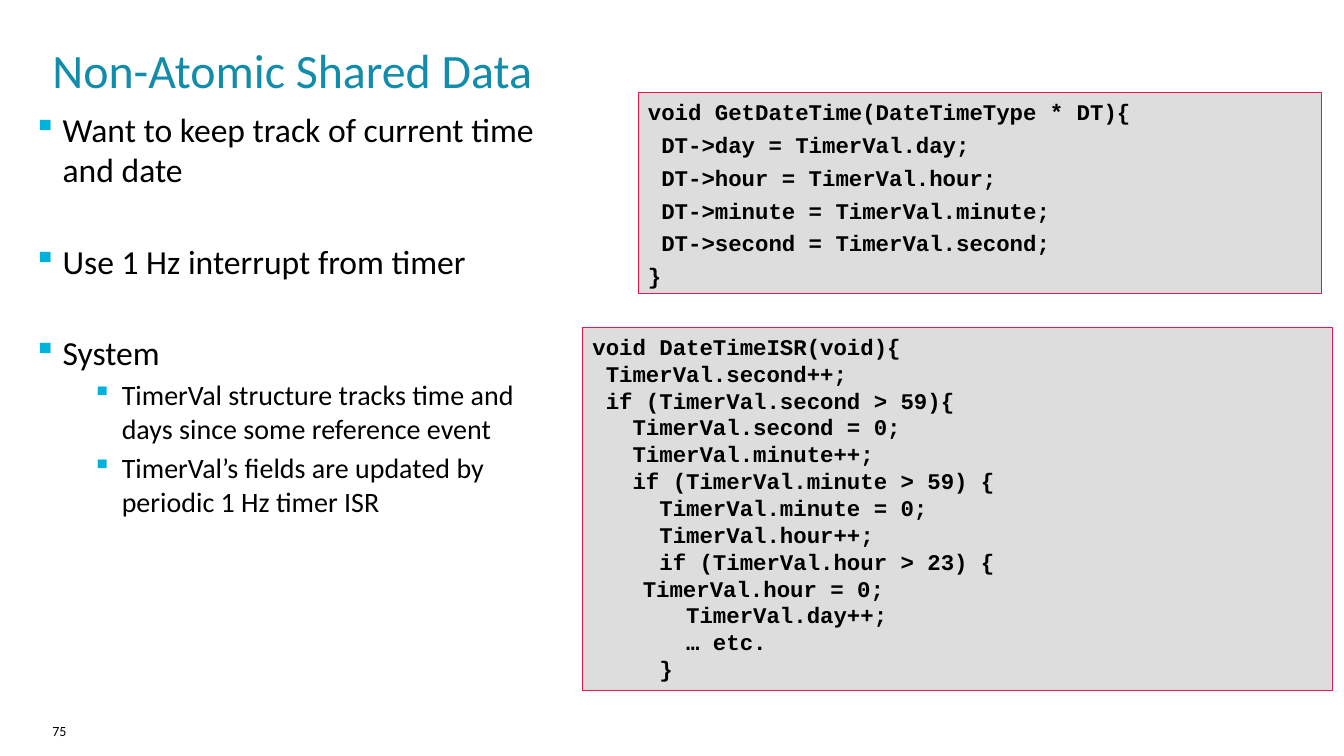
from dataclasses import dataclass

from lxml import etree
from pptx import Presentation, util as u
from pptx.dml.color import RGBColor
from pptx.enum import shapes, text
from pptx.oxml.ns import qn

BLACK, TEAL, CYAN, GREY, PINK = "000000", "128CAB", "00B1DB", "DDDDDD", "ED174F"
HANGING = 0.74


@dataclass
class Box:
    left: float
    top: float
    width: float
    height: float

    def lengths(self) -> tuple:
        return tuple(u.Cm(n) for n in (self.left, self.top, self.width, self.height))


@dataclass
class Bullet:
    wording: str
    size: float = 24
    margin: float = HANGING
    before: float = 4


@dataclass
class CodePanel:
    box: Box
    code: str
    before: float = 0


def color(value: str) -> RGBColor:
    return RGBColor.from_string(value)


def prepare(frame, inset: tuple = (0, 0, 0, 0), anchor=text.MSO_ANCHOR.TOP) -> None:
    frame.word_wrap = True
    frame.auto_size = text.MSO_AUTO_SIZE.NONE
    frame.vertical_anchor = anchor
    (frame.margin_left, frame.margin_top,
     frame.margin_right, frame.margin_bottom) = (u.Cm(n) for n in inset)


def write(frame, wording: str, *, first: bool = True, size: float = 24,
          font: str = "Calibri", fill: str = BLACK, bold: bool = False,
          before: float = 0):
    paragraph = frame.paragraphs[0] if first else frame.add_paragraph()
    paragraph.alignment = text.PP_ALIGN.LEFT
    paragraph.space_before = u.Pt(0 if first else before)
    run = paragraph.add_run()
    run.text = wording
    run.font.size, run.font.name, run.font.bold = u.Pt(size), font, bold
    run.font.color.rgb = color(fill)
    return paragraph


def add_bullet(paragraph, margin: float) -> None:
    properties = paragraph._p.get_or_add_pPr()
    properties.set("marL", str(u.Cm(margin)))
    properties.set("indent", str(-u.Cm(HANGING)))
    tint = etree.SubElement(properties, qn("a:buClr"))
    etree.SubElement(tint, qn("a:srgbClr"), val=CYAN)
    etree.SubElement(properties, qn("a:buSzPct"), val="95000")
    etree.SubElement(properties, qn("a:buChar"), char="▪")


def add_code(slide, panel: CodePanel) -> None:
    shape = slide.shapes.add_shape(shapes.MSO_SHAPE.RECTANGLE, *panel.box.lengths())
    shape.shadow.inherit = False
    shape.fill.solid()
    shape.fill.fore_color.rgb = color(GREY)
    shape.line.color.rgb = color(PINK)
    shape.line.width = u.Pt(0.75)
    prepare(shape.text_frame, (0.25, 0.13, 0.25, 0.13))
    for index, line in enumerate(panel.code.split("\n")):
        write(shape.text_frame, line, first=index == 0, size=16,
              font="Courier New", bold=True, before=panel.before)


BULLETS = [
    Bullet("Want to keep track of current time and date"),
    Bullet("Use 1 Hz interrupt from timer", before=36.5),
    Bullet("System", before=36.5),
    Bullet("TimerVal structure tracks time and days since some reference event",
           size=20, margin=2.23),
    Bullet("TimerVal’s fields are updated by periodic 1 Hz timer ISR",
           size=20, margin=2.23),
]

PANELS = [
    CodePanel(Box(16.08, 2.34, 17.22, 5.05), """void GetDateTime(DateTimeType * DT){
 DT->day = TimerVal.day;
 DT->hour = TimerVal.hour;
 DT->minute = TimerVal.minute;
 DT->second = TimerVal.second;
}""", before=4.3),
    CodePanel(Box(14.68, 8.26, 18.9, 9.14), """void DateTimeISR(void){
 TimerVal.second++;
 if (TimerVal.second > 59){
   TimerVal.second = 0;
   TimerVal.minute++;
   if (TimerVal.minute > 59) {
     TimerVal.minute = 0;
     TimerVal.hour++;
     if (TimerVal.hour > 23) {
\tTimerVal.hour = 0;
       TimerVal.day++;
       … etc.
     }"""),
]


def main() -> None:
    presentation = Presentation()
    presentation.slide_width, presentation.slide_height = u.Cm(33.87), u.Cm(19.05)
    slide = presentation.slides.add_slide(presentation.slide_layouts[5])

    # Title
    title = slide.shapes.title
    title.left, title.top, title.width, title.height = Box(
        1.32, 0.94, 30.99, 1.6).lengths()
    prepare(title.text_frame, anchor=text.MSO_ANCHOR.MIDDLE)
    write(title.text_frame, "Non-Atomic Shared Data", size=34.2, fill=TEAL)

    # Bullet list
    body = slide.shapes.add_textbox(*Box(0.84, 2.74, 13.54, 15.67).lengths())
    prepare(body.text_frame)
    for index, bullet in enumerate(BULLETS):
        paragraph = write(body.text_frame, bullet.wording, first=index == 0,
                          size=bullet.size, before=bullet.before)
        add_bullet(paragraph, bullet.margin)

    # Code panels
    for panel in PANELS:
        add_code(slide, panel)

    # Page number
    number = slide.shapes.add_textbox(*Box(1.32, 18.21, 3.61, 0.66).lengths())
    prepare(number.text_frame, (0, 0, 0.25, 0))
    write(number.text_frame, "75", size=10)

    presentation.save("out.pptx")


if __name__ == "__main__":
    main()
